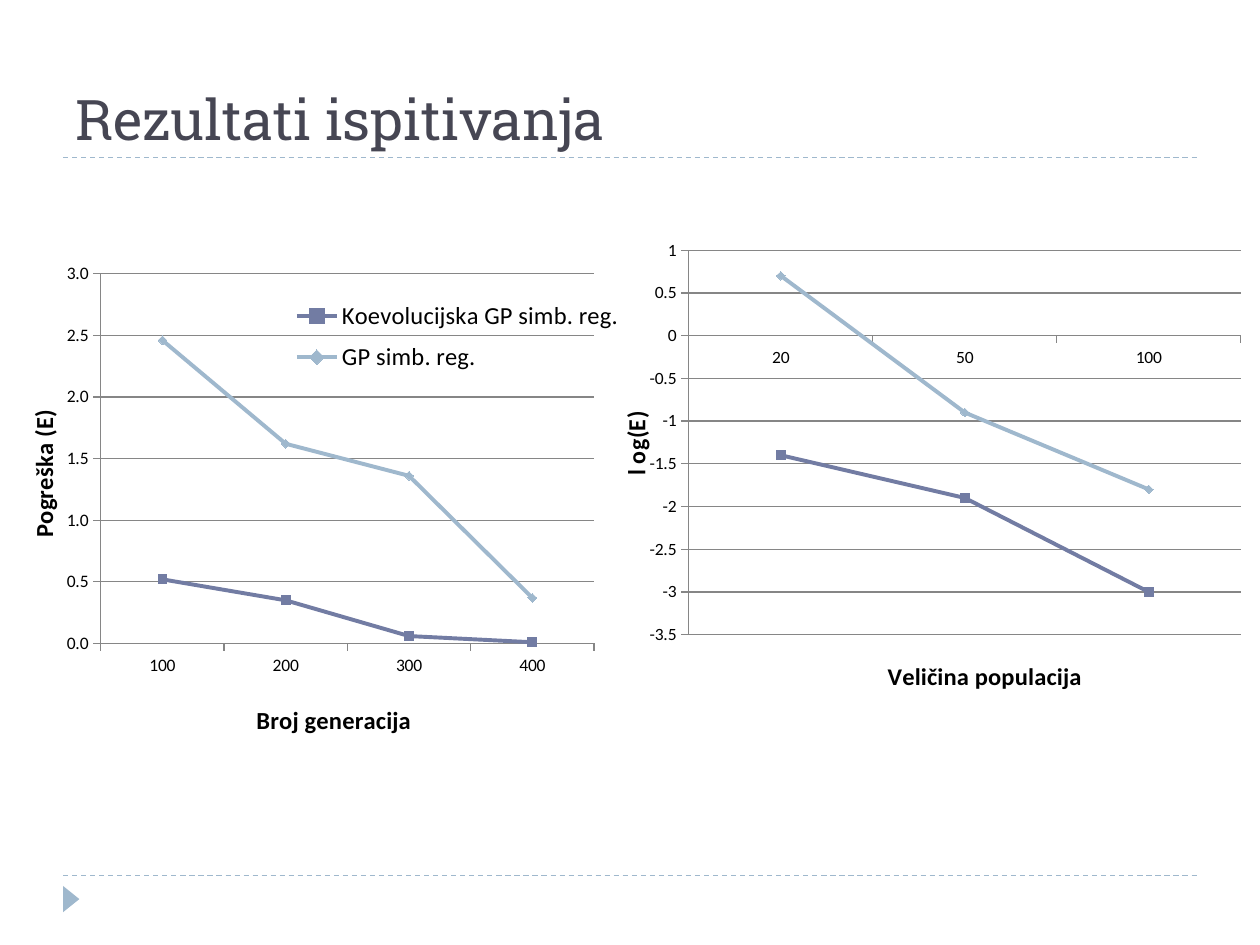
import pptx
import pptx.chart.data
import pptx.dml.color
import pptx.enum.chart
import pptx.enum.dml
import pptx.enum.shapes
import pptx.enum.text
import pptx.oxml
import pptx.oxml.ns
import pptx.util
from pptx.util import Cm


class Theme:
    heading_font, body_font = "Roboto Slab", "Calibri"
    heading, text, grid = "464653", "000000", "868686"
    series = ("727CA3", "9FB8CD")
    accent = "9FB8CD"
    heading_size, label_size, tick_size = 32, 14, 10
    marker_size = 5
    rule_width, series_width = 0.75, 2.25


TITLE = "Rezultati ispitivanja"
RULE_LEFT, RULE_RIGHT = 1.27, 24.13
RULE_HEIGHTS = (3.18, 17.65)

# Boxes are in centimetres; layouts are fractions of the chart's own box.
CHARTS = [
    {
        "box": (0, 4.95, 12.7, 11.13),
        "plot": (0.16, 0.051, 0.783, 0.67),
        "categories": ("100", "200", "300", "400"),
        "series": {
            "Koevolucijska GP simb. reg.": (0.52, 0.35, 0.06, 0.01),
            "GP simb. reg.": (2.46, 1.62, 1.36, 0.37),
        },
        "category_title": ("Broj generacija", (0.4, 0.82)),
        "value_title": ("Pogreška (E)", (0.035, 0.29)),
        "scale": (0, 3),
        "number_format": "0.0",
        "legend": (0.465, 0.08, 0.53, 0.17),
    },
    {
        "box": (12.12, 4.57, 13.28, 9.53),
        "plot": (0.133, 0.051, 0.838, 0.834),
        "categories": ("20", "50", "100"),
        "series": {
            "Series 1": (-1.4, -1.9, -3),
            "Series 2": (0.7, -0.9, -1.8),
        },
        "category_title": ("Veličina populacija", (0.428, 0.93)),
        "value_title": ("l og(E)", (0.02, 0.394)),
        "scale": (-3.5, 1),
        "number_format": "General",
        "legend": None,
    },
]


def rgb(color):
    return pptx.dml.color.RGBColor.from_string(color)


def style_font(font, size, color=Theme.text, name=Theme.body_font, bold=False):
    font.size, font.name, font.bold = pptx.util.Pt(size), name, bold
    font.color.rgb = rgb(color)


def style_line(line, color, width):
    line.color.rgb = rgb(color)
    line.width = pptx.util.Pt(width)


def set_layout(part, fractions, after=None, inner=False):
    """Give a chart part a fixed place, after the named child or first."""
    qn = pptx.oxml.ns.qn
    for old in part.findall(qn("c:layout")):
        part.remove(old)
    settings = [("layoutTarget", "inner")] if inner else []
    settings += [("xMode", "edge"), ("yMode", "edge")]
    settings += zip("xywh", fractions)
    children = "".join(f'<c:{tag} val="{value}"/>' for tag, value in settings)
    layout = pptx.oxml.parse_xml(
        f'<c:layout {pptx.oxml.ns.nsdecls("c")}>'
        f"<c:manualLayout>{children}</c:manualLayout></c:layout>"
    )
    if after:
        part.find(qn(after)).addnext(layout)
    else:
        part.insert(0, layout)


def style_axis(axis, title, position):
    axis.major_tick_mark = pptx.enum.chart.XL_TICK_MARK.OUTSIDE
    axis.minor_tick_mark = pptx.enum.chart.XL_TICK_MARK.NONE
    style_line(axis.format.line, Theme.grid, Theme.rule_width)
    style_font(axis.tick_labels.font, Theme.tick_size)
    paragraph = axis.axis_title.text_frame.paragraphs[0]
    paragraph.text = title
    style_font(paragraph.runs[0].font, Theme.label_size, bold=True)
    set_layout(axis.axis_title._element, position, after="c:tx")


def add_line_chart(slide, content):
    data = pptx.chart.data.CategoryChartData()
    data.categories = content["categories"]
    for name, values in content["series"].items():
        data.add_series(name, values)
    chart = slide.shapes.add_chart(
        pptx.enum.chart.XL_CHART_TYPE.LINE_MARKERS, *map(Cm, content["box"]), data
    ).chart
    chart.has_title = False
    style_font(chart.font, Theme.tick_size)
    plot = chart.plots[0]
    plot.vary_by_categories = False
    set_layout(chart._chartSpace.chart.plotArea, content["plot"], inner=True)

    style_axis(chart.category_axis, *content["category_title"])
    value_axis = chart.value_axis
    style_axis(value_axis, *content["value_title"])
    value_axis.axis_title.text_frame._txBody.bodyPr.set("rot", "-5400000")
    value_axis.minimum_scale, value_axis.maximum_scale = content["scale"]
    value_axis.major_unit = 0.5
    value_axis.tick_labels.number_format = content["number_format"]
    value_axis.tick_labels.number_format_is_linked = False
    value_axis.has_major_gridlines = True
    style_line(value_axis.major_gridlines.format.line, Theme.grid, Theme.rule_width)

    markers = pptx.enum.chart.XL_MARKER_STYLE
    looks = zip(Theme.series, (markers.SQUARE, markers.DIAMOND))
    for series, (color, marker) in zip(plot.series, looks):
        series.smooth = False
        style_line(series.format.line, color, Theme.series_width)
        series.marker.style, series.marker.size = marker, Theme.marker_size
        series.marker.format.fill.solid()
        series.marker.format.fill.fore_color.rgb = rgb(color)
        style_line(series.marker.format.line, color, Theme.rule_width)

    chart.has_legend = content["legend"] is not None
    if chart.has_legend:
        chart.legend.position = pptx.enum.chart.XL_LEGEND_POSITION.RIGHT
        chart.legend.include_in_layout = False
        style_font(chart.legend.font, Theme.label_size)
        set_layout(chart.legend._element, content["legend"], after="c:legendPos")


def add_rule(slide, height):
    rule = slide.shapes.add_connector(
        pptx.enum.shapes.MSO_CONNECTOR.STRAIGHT,
        Cm(RULE_LEFT), Cm(height), Cm(RULE_RIGHT), Cm(height),
    )
    style_line(rule.line, Theme.accent, Theme.rule_width)
    rule.line.dash_style = pptx.enum.dml.MSO_LINE.DASH
    rule._element.spPr.append(
        pptx.oxml.parse_xml(f'<a:effectLst {pptx.oxml.ns.nsdecls("a")}/>')
    )


def add_corner_arrow(slide):
    arrow = slide.shapes.add_shape(
        pptx.enum.shapes.MSO_SHAPE.ISOSCELES_TRIANGLE,
        Cm(1.17), Cm(17.96), Cm(0.53), Cm(0.33),
    )
    arrow.rotation = 90
    arrow.shadow.inherit = False
    arrow.fill.solid()
    arrow.fill.fore_color.rgb = rgb(Theme.accent)
    arrow.line.fill.background()


def add_heading(slide):
    frame = slide.shapes.add_textbox(
        Cm(RULE_LEFT), Cm(0.43), Cm(RULE_RIGHT - RULE_LEFT), Cm(2.75)
    ).text_frame
    frame.word_wrap = True
    frame.vertical_anchor = pptx.enum.text.MSO_ANCHOR.BOTTOM
    frame.text = TITLE
    style_font(frame.paragraphs[0].runs[0].font, Theme.heading_size,
               Theme.heading, Theme.heading_font)


def main():
    presentation = pptx.Presentation()
    presentation.slide_width, presentation.slide_height = Cm(25.4), Cm(19.05)
    slide = presentation.slides.add_slide(presentation.slide_layouts[6])
    for height in RULE_HEIGHTS:
        add_rule(slide, height)
    add_corner_arrow(slide)
    add_heading(slide)
    for content in CHARTS:
        add_line_chart(slide, content)
    presentation.save("out.pptx")


if __name__ == "__main__":
    main()
